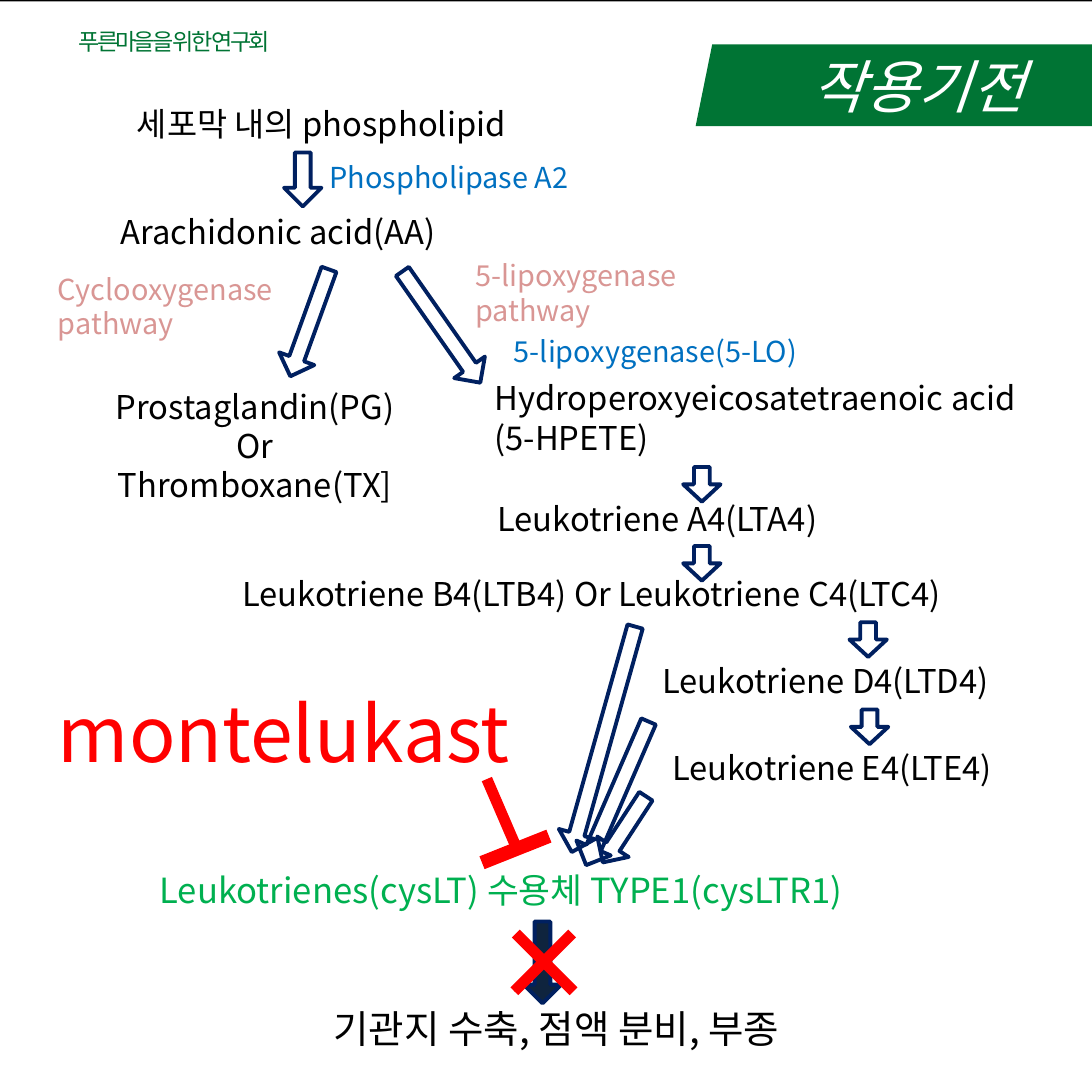
from dataclasses import dataclass
from typing import NamedTuple

from lxml import etree
from pptx import Presentation
from pptx.dml.color import RGBColor
from pptx.enum.shapes import MSO_SHAPE as Preset
from pptx.enum.text import MSO_AUTO_SIZE as AutoSize, MSO_ANCHOR as Anchor, PP_ALIGN as Align
from pptx.oxml.ns import qn
from pptx.shapes.autoshape import Shape
from pptx.slide import Slide
from pptx.util import Inches, Pt


@dataclass(frozen=True)
class Theme:
    font: str = "Noto Sans CJK KR"
    black: str = "000000"
    white: str = "FFFFFF"
    navy: str = "002060"
    dark_navy: str = "0F243E"
    enzyme: str = "0070C0"
    pathway: str = "D99694"
    receptor: str = "00B050"
    banner: str = "007434"
    red: str = "FF0000"
    header_size: int = 12
    note_size: int = 15
    body_size: int = 17
    receptor_size: int = 18
    effect_size: int = 20
    title_size: int = 30
    drug_size: int = 40
    outline: int = 2


THEME = Theme()
SLIDE_SIDE = 7.88
ARROW_WIDTH = 0.27
SHORT_ARROW = 0.25


class Box(NamedTuple):
    left: float
    top: float
    width: float
    height: float


class Label(NamedTuple):
    text: str
    box: Box
    color: str = THEME.black
    size: int = THEME.body_size
    centered: bool = False
    italic: bool = False
    spacing: float = 0


class Arrow(NamedTuple):
    left: float
    top: float
    height: float
    rotation: float = 0
    fill: str | None = None


class Bar(NamedTuple):
    box: Box
    rotation: float = 0
    color: str = THEME.red


LABELS = [
    # Cell membrane to arachidonic acid
    Label("세포막 내의 phospholipid", Box(0.46, 0.7, 3.72, 0.39), centered=True),
    Label("Phospholipase A2", Box(2.28, 1.1, 2.01, 0.35), THEME.enzyme, THEME.note_size),
    Label("Arachidonic acid(AA)", Box(0.77, 1.48, 2.93, 0.39)),
    # Cyclooxygenase branch
    Label("Cyclooxygenase pathway", Box(0.32, 1.91, 1.89, 0.61), THEME.pathway, THEME.note_size),
    Label("Prostaglandin(PG)\nOr\nThromboxane(TX]", Box(0.53, 2.74, 2.62, 0.96), centered=True),
    # Lipoxygenase branch
    Label("5-lipoxygenase\npathway", Box(3.33, 1.81, 1.78, 0.61), THEME.pathway, THEME.note_size),
    Label("5-lipoxygenase(5-LO)", Box(3.61, 2.36, 3.25, 0.35), THEME.enzyme, THEME.note_size),
    Label("Hydroperoxyeicosatetraenoic acid (5-HPETE)", Box(3.47, 2.68, 4.16, 0.67)),
    Label("Leukotriene A4(LTA4)", Box(3.49, 3.55, 2.89, 0.39)),
    Label("Leukotriene B4(LTB4) Or Leukotriene C4(LTC4)", Box(1.65, 4.09, 5.95, 0.39)),
    Label("Leukotriene D4(LTD4) ", Box(4.5, 4.72, 2.97, 0.39), centered=True),
    Label("Leukotriene E4(LTE4)", Box(4.52, 5.35, 2.97, 0.39), centered=True),
    # Receptor, drug and effects
    Label("Leukotrienes(cysLT) 수용체 TYPE1(cysLTR1)", Box(0.32, 6.22, 6.59, 0.4),
          THEME.receptor, THEME.receptor_size, centered=True),
    Label("montelukast", Box(0.32, 4.9, 3.83, 0.77), THEME.red, THEME.drug_size),
    Label("기관지 수축, 점액 분비, 부종", Box(1.73, 7.2, 4.57, 0.44),
          size=THEME.effect_size, centered=True),
    # Header and title
    Label("푸른마을을 위한 연구회", Box(0.47, 0.15, 1.81, 0.3),
          THEME.banner, THEME.header_size, spacing=-1.5),
    Label("작용기전", Box(5.76, 0.32, 2.11, 0.61), THEME.white, THEME.title_size, italic=True),
]

ARROWS = [
    # Pathway steps
    Arrow(2.05, 1.1, 0.39),
    Arrow(2.1, 1.92, 0.82, 19.9),
    Arrow(3.05, 1.87, 0.98, 325),
    Arrow(4.93, 3.37, SHORT_ARROW),
    Arrow(4.93, 3.94, SHORT_ARROW),
    Arrow(6.13, 4.49, SHORT_ARROW),
    Arrow(6.14, 5.12, SHORT_ARROW),
    # Leukotrienes to the receptor
    Arrow(4.37, 5.7, 0.57, 33.1),
    Arrow(4.32, 5.16, 1.13, 23.5),
    Arrow(4.22, 4.49, 1.69, 15.7),
    # Receptor to the blocked effects
    Arrow(3.78, 6.65, 0.59, fill=THEME.dark_navy),
]

BARS = [
    # Inhibition sign
    Bar(Box(3.46, 6.08, 0.52, 0.1), 338.3),
    Bar(Box(3.35, 5.83, 0.54, 0.08), 66.7),
    # Cross over the last arrow
    Bar(Box(3.88, 6.65, 0.08, 0.59), 45),
    Bar(Box(3.89, 6.65, 0.08, 0.59), 135),
]

TITLE_BANNER = [(7.88, 0.32), (7.88, 0.91), (5.02, 0.91), (5.14, 0.32)]


def rgb(color: str) -> RGBColor:
    return RGBColor.from_string(color)


def paint(shape: Shape, fill: str | None, line: str | None = None) -> None:
    shape.shadow.inherit = False
    if fill:
        shape.fill.solid()
        shape.fill.fore_color.rgb = rgb(fill)
    else:
        shape.fill.background()
    if line:
        shape.line.color.rgb = rgb(line)
        shape.line.width = Pt(THEME.outline)
    else:
        shape.line.fill.background()


def add_preset(slide: Slide, preset: Preset, box: Box, rotation: float = 0) -> Shape:
    shape = slide.shapes.add_shape(preset, *map(Inches, box))
    shape.rotation = rotation
    return shape


def add_bar(slide: Slide, bar: Bar) -> None:
    paint(add_preset(slide, Preset.RECTANGLE, bar.box, bar.rotation), bar.color)


def add_arrow(slide: Slide, arrow: Arrow) -> None:
    box = Box(arrow.left, arrow.top, ARROW_WIDTH, arrow.height)
    shape = add_preset(slide, Preset.DOWN_ARROW, box, arrow.rotation)
    shape.adjustments[0] = 0.42
    shape.adjustments[1] = 0.5
    paint(shape, arrow.fill, THEME.navy)


def add_banner(slide: Slide) -> None:
    points = [(Inches(x), Inches(y)) for x, y in TITLE_BANNER]
    builder = slide.shapes.build_freeform(*points[0])
    builder.add_line_segments(points[1:], close=True)
    paint(builder.convert_to_shape(), THEME.banner)


def add_label(slide: Slide, label: Label) -> None:
    frame = slide.shapes.add_textbox(*map(Inches, label.box)).text_frame
    frame.word_wrap = True
    frame.auto_size = AutoSize.SHAPE_TO_FIT_TEXT
    frame.vertical_anchor = Anchor.TOP
    frame.text = label.text
    for paragraph in frame.paragraphs:
        paragraph.alignment = Align.CENTER if label.centered else Align.LEFT
        for run in paragraph.runs:
            run.font.name = THEME.font
            run.font.size = Pt(label.size)
            run.font.italic = label.italic
            run.font.color.rgb = rgb(label.color)
            # East Asian font and letter spacing
            properties = run._r.get_or_add_rPr()
            etree.SubElement(properties, qn("a:ea")).set("typeface", THEME.font)
            if label.spacing:
                properties.set("spc", str(round(label.spacing * 100)))


def main() -> None:
    presentation = Presentation()
    presentation.slide_width = presentation.slide_height = Inches(SLIDE_SIDE)
    slide = presentation.slides.add_slide(presentation.slide_layouts[6])
    slide.background.fill.solid()
    slide.background.fill.fore_color.rgb = rgb(THEME.black)

    # White page over the black background
    add_bar(slide, Bar(Box(0, 0.01, SLIDE_SIDE, 7.87), color=THEME.white))
    add_banner(slide)
    for label in LABELS:
        add_label(slide, label)
    for arrow in ARROWS:
        add_arrow(slide, arrow)
    for bar in BARS:
        add_bar(slide, bar)
    presentation.save("out.pptx")


if __name__ == "__main__":
    main()
